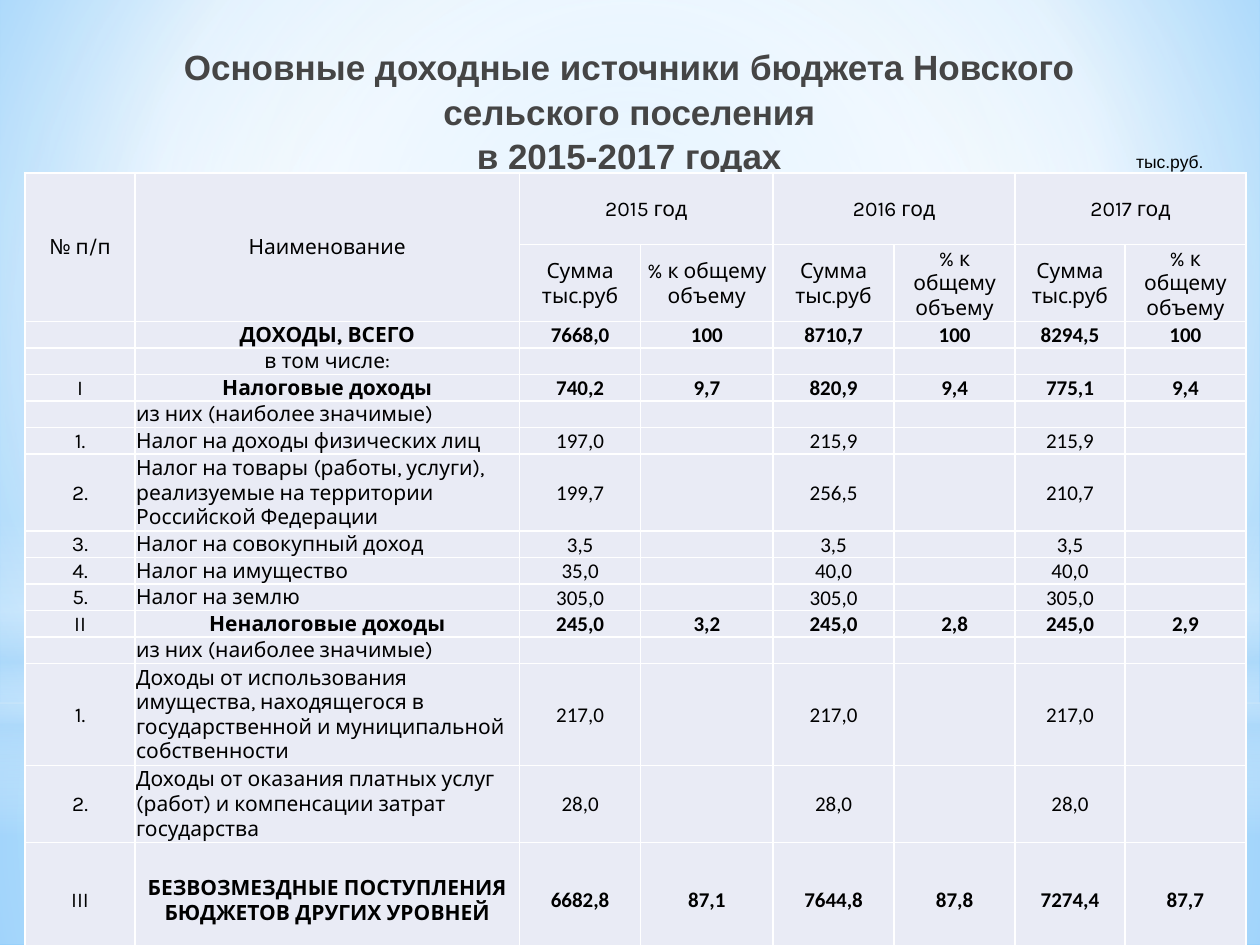
import dataclasses
import itertools

import pptx
import pptx.dml.color
import pptx.enum.shapes
import pptx.enum.text
import pptx.oxml
import pptx.oxml.ns
import pptx.util

SHAPE = pptx.enum.shapes.MSO_SHAPE
ALIGN = pptx.enum.text.PP_ALIGN
ANCHOR = pptx.enum.text.MSO_ANCHOR
NS = pptx.oxml.ns.nsdecls("a")
qn = pptx.oxml.ns.qn


@dataclasses.dataclass(frozen=True)
class Theme:
    """Colours, fonts and type sizes of the slide."""
    title: str = "454545"
    text: str = "000000"
    cell: str = "E9EBF5"
    white: str = "FFFFFF"
    sky: str = "B4DCFA"
    sky_mid: str = "9ED5FF"
    sky_deep: str = "5BB9FF"
    heading_font: str = "Arial"
    label_font: str = "Karla"
    number_font: str = "Calibri"
    title_size: int = 20
    units_size: int = 10
    table_size: int = 12


@dataclasses.dataclass(frozen=True)
class Box:
    """A rectangle in inches."""
    x: float
    y: float
    w: float
    h: float

    def inner(self, x, y, w, h):
        """Return the inner box given as shares of this one."""
        return Box(self.x + x * self.w, self.y + y * self.h, w * self.w, h * self.h)

    def emu(self):
        """Return left, top, width and height as lengths."""
        return [pptx.util.Inches(v) for v in (self.x, self.y, self.w, self.h)]


T = Theme()
PAGE = Box(0, 0, 10, 7.5)
CENTRE = (50, 50, 50, 50)
COLS = (0.87, 3.05, 0.96, 1.05, 0.96, 0.96, 0.87, 0.96)
LINE, TALL = 0.18, 0.53
ROWS = (0.54, TALL, *[LINE] * 5, TALL, *[LINE] * 5, 0.71, TALL, 0.87)
YEARS = ("2015 год", "2016 год", "2017 год")
MEASURES = ("Сумма тыс.руб", "% к общему объему")
NOTE = "из них (наиболее значимые)"
GROUPS = {"", "I", "II", "III"}
INCOME = [
    ("", "ДОХОДЫ, ВСЕГО", ("7668,0", "8710,7", "8294,5"), ("100", "100", "100")),
    ("", "в том числе:", (), ()),
    ("I", "Налоговые доходы", ("740,2", "820,9", "775,1"), ("9,7", "9,4", "9,4")),
    ("", NOTE, (), ()),
    ("1.", "Налог на доходы физических лиц", ("197,0", "215,9", "215,9"), ()),
    ("2.", "Налог на товары (работы, услуги), реализуемые на территории Российской Федерации",
     ("199,7", "256,5", "210,7"), ()),
    ("3.", "Налог на совокупный доход", ("3,5", "3,5", "3,5"), ()),
    ("4.", "Налог на имущество", ("35,0", "40,0", "40,0"), ()),
    ("5.", "Налог на землю", ("305,0", "305,0", "305,0"), ()),
    ("II", "Неналоговые доходы", ("245,0", "245,0", "245,0"), ("3,2", "2,8", "2,9")),
    ("", NOTE, (), ()),
    ("1.", "Доходы от использования имущества, находящегося в государственной и муниципальной "
     "собственности", ("217,0", "217,0", "217,0"), ()),
    ("2.", "Доходы от оказания платных услуг (работ) и компенсации затрат государства",
     ("28,0", "28,0", "28,0"), ()),
    ("III", "БЕЗВОЗМЕЗДНЫЕ ПОСТУПЛЕНИЯ БЮДЖЕТОВ ДРУГИХ УРОВНЕЙ",
     ("6682,8", "7644,8", "7274,4"), ("87,1", "87,8", "87,7")),
]


def gradient(stops, focus=None):
    """Return a gradient fill, round about the focus or else vertical."""
    gs = "".join(
        f'<a:gs pos="{pos * 1000}"><a:srgbClr val="{color}">'
        f'<a:alpha val="{alpha * 1000}"/></a:srgbClr></a:gs>' for pos, color, alpha in stops)
    shade = '<a:lin ang="5400000" scaled="0"/>'
    if focus:
        sides = " ".join(f'{k}="{v * 1000}"' for k, v in zip("ltrb", focus))
        shade = f'<a:path path="circle"><a:fillToRect {sides}/></a:path>'
    return pptx.oxml.parse_xml(
        f'<a:gradFill {NS} rotWithShape="1"><a:gsLst>{gs}</a:gsLst>{shade}</a:gradFill>')


def style(p, font, size, color, align, bold=False):
    """Set the font and alignment of a paragraph."""
    p.alignment = align
    p.font.name, p.font.size, p.font.bold = font, pptx.util.Pt(size), bold
    p.font.color.rgb = pptx.dml.color.RGBColor.from_string(color)


def add_backdrop(s, box):
    """Fill the background and lay the soft light over it."""
    s.background.fill.solid()
    bg = s.element.find(".//" + qn("p:bgPr"))
    bg.replace(bg[0], gradient(
        [(0, T.sky_mid, 100), (60, T.white, 100), (100, T.sky_deep, 100)], (20, 10, 20, 60)))
    layers = [
        (SHAPE.RECTANGLE, (0, 0.744, 1, 0.256),
         [(0, T.white, 91), (37, T.white, 76), (100, T.sky, 79)], CENTRE),
        (SHAPE.RECTANGLE, (0, 0, 1, 0.744),
         [(0, T.white, 89), (48, T.white, 62), (100, T.sky, 79)], CENTRE),
        (SHAPE.RECTANGLE, (0, 0.55, 1, 0.333),
         [(0, T.white, 0), (29, T.white, 30), (45, T.sky, 40),
          (55, T.white, 26), (65, T.sky, 60), (100, T.white, 0)], None),
        (SHAPE.OVAL, (0, 0.233, 1, 0.744), [(0, T.white, 100), (56, T.white, 0)], CENTRE),
    ]
    for kind, share, stops, focus in layers:
        sp = s.shapes.add_shape(kind, *box.inner(*share).emu())
        sp.shadow.inherit = False
        sp.line.fill.background()
        sp.fill.background()
        props = sp.element.spPr
        props.replace(props.find(qn("a:noFill")), gradient(stops, focus))


def add_heading(s, box):
    """Place the title and the unit label in the heading band."""
    tf = s.shapes.add_textbox(*box.inner(0.121, 0, 0.757, 1).emu()).text_frame
    tf.word_wrap = True
    tf.margin_top = pptx.util.Inches(0.07)
    p = tf.paragraphs[0]
    p.text = "Основные доходные источники бюджета Новского сельского поселения\vв 2015-2017 годах"
    p.line_spacing = 1.05
    style(p, T.heading_font, T.title_size, T.title, ALIGN.CENTER, True)
    tf = s.shapes.add_textbox(*box.inner(0.792, 0.696, 0.173, 0.216).emu()).text_frame
    tf.word_wrap = True
    p = tf.paragraphs[0]
    p.text = "тыс.руб."
    style(p, T.heading_font, T.units_size, T.text, ALIGN.RIGHT)


def fill_cell(cell, text, font=T.label_font, align=ALIGN.CENTER, bold=False):
    """Write a table cell with its fill, margins and borders."""
    cell.fill.solid()
    cell.fill.fore_color.rgb = pptx.dml.color.RGBColor.from_string(T.cell)
    cell.vertical_anchor = ANCHOR.MIDDLE
    cell.margin_left = cell.margin_top = cell.margin_right = pptx.util.Inches(0.01)
    cell.margin_bottom = 0
    p = cell.text_frame.paragraphs[0]
    p.text = text
    style(p, font, T.table_size, T.text, align, bold)
    if not text:
        p._p.append(pptx.oxml.parse_xml(f'<a:endParaRPr {NS} sz="{T.table_size * 100}"/>'))
    for i, side in enumerate(("lnL", "lnR", "lnT", "lnB")):
        cell._tc.tcPr.insert(i, pptx.oxml.parse_xml(
            f'<a:{side} {NS} w="12700"><a:solidFill><a:srgbClr val="{T.white}"/>'
            f'</a:solidFill></a:{side}>'))


def add_income_table(s, box):
    """Build the income table with its two-row header."""
    table = s.shapes.add_table(len(ROWS), len(COLS), *box.emu()).table
    table.first_row = table.horz_banding = False
    for col, share in zip(table.columns, COLS):
        col.width = pptx.util.Inches(box.w * share / sum(COLS))
    for row, share in zip(table.rows, ROWS):
        row.height = pptx.util.Inches(box.h * share / sum(ROWS))
    top = ["№ п/п", "Наименование", *itertools.chain(*((year, "") for year in YEARS))]
    for r, texts in enumerate((top, ["", "", *MEASURES * len(YEARS)])):
        for c, text in enumerate(texts):
            fill_cell(table.cell(r, c), text)
    for c in range(2):
        table.cell(0, c).merge(table.cell(1, c))
    for c in range(2, len(COLS), 2):
        table.cell(0, c).merge(table.cell(0, c + 1))
    for r, (number, name, sums, shares) in enumerate(INCOME, 2):
        bold = bool(shares)
        left = number not in GROUPS or name == NOTE
        fill_cell(table.cell(r, 0), number)
        fill_cell(table.cell(r, 1), name, align=ALIGN.LEFT if left else ALIGN.CENTER, bold=bold)
        for i in range(len(YEARS)):
            for j, values in enumerate((sums, shares)):
                value = values[i] if values else ""
                fill_cell(table.cell(r, 2 + 2 * i + j), value, T.number_font, bold=bold)


def main():
    """Build the slide and save it."""
    prs = pptx.Presentation()
    prs.slide_width, prs.slide_height = PAGE.emu()[2:]
    s = prs.slides.add_slide(prs.slide_layouts[6])
    add_backdrop(s, PAGE)
    add_heading(s, PAGE.inner(0, 0.037, 1, 0.167))
    add_income_table(s, PAGE.inner(0.02, 0.183, 0.969, 0.775))
    prs.save("out.pptx")


if __name__ == "__main__":
    main()
